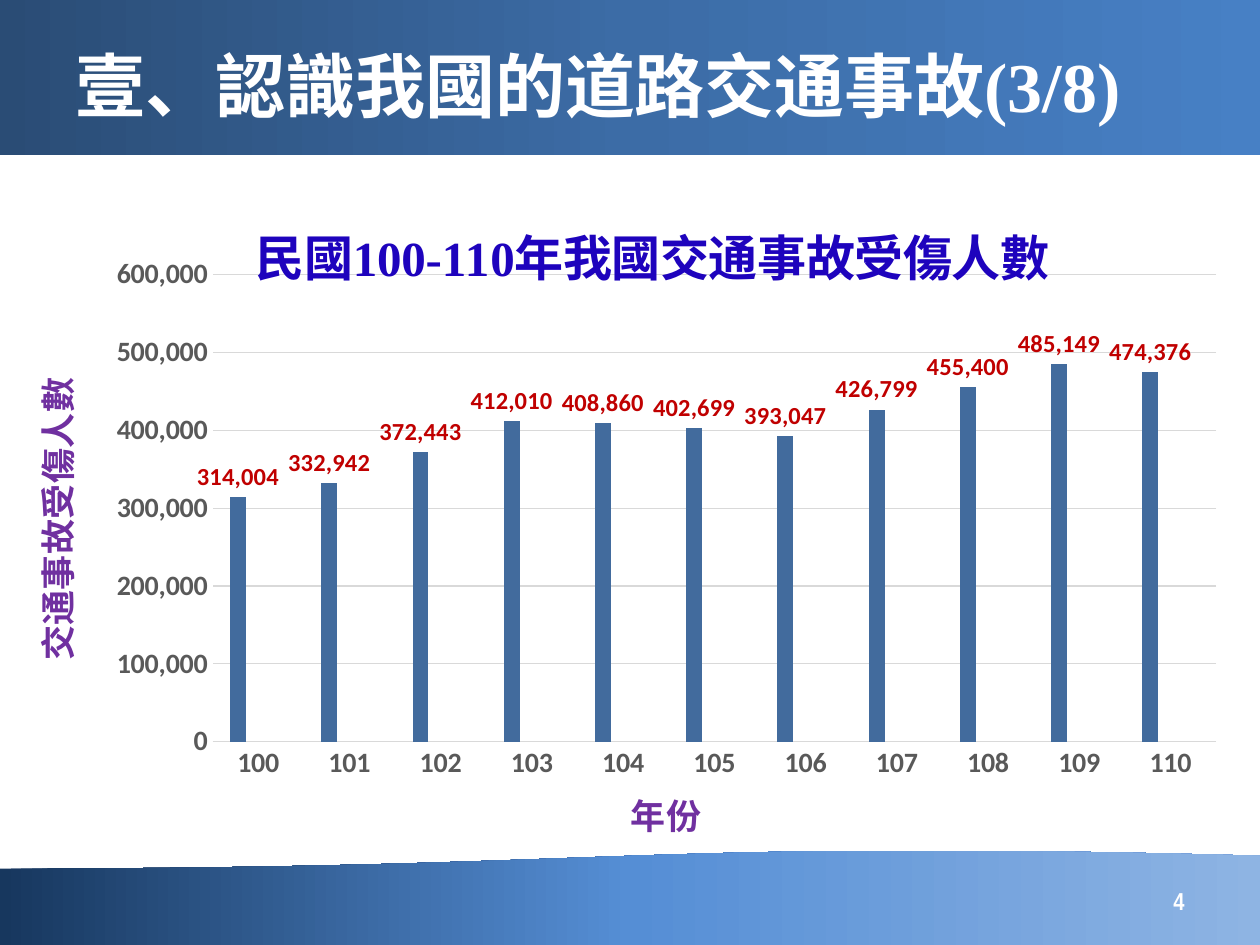
from pptx import Presentation
from pptx.chart.data import CategoryChartData
from pptx.dml.color import RGBColor
from pptx.enum.chart import XL_CHART_TYPE, XL_LABEL_POSITION, XL_TICK_MARK
from pptx.enum.shapes import MSO_SHAPE
from pptx.enum.text import MSO_ANCHOR, MSO_AUTO_SIZE, PP_ALIGN
from pptx.oxml.ns import qn
from pptx.util import Cm, Pt
from lxml import etree

COLUMN = XL_CHART_TYPE.COLUMN_CLUSTERED
OUTSIDE_END = XL_LABEL_POSITION.OUTSIDE_END
NO_TICK = XL_TICK_MARK.NONE
RECTANGLE = MSO_SHAPE.RECTANGLE
WAVE = MSO_SHAPE.FLOWCHART_DOCUMENT
MIDDLE = MSO_ANCHOR.MIDDLE
NO_AUTOFIT = MSO_AUTO_SIZE.NONE
LEFT, RIGHT = PP_ALIGN.LEFT, PP_ALIGN.RIGHT

CJK, SERIF, SANS, NARROW = "Noto Sans CJK SC", "Times New Roman", "Calibri", "Arial Narrow"
COLORS = {
    "white": "FFFFFF", "heading": "1E03BD", "axis_title": "7030A0",
    "axis_text": "595959", "grid": "D9D9D9", "label": "C00000",
    "series": ["426B9D", "4F81BD", "AABAD7"],
    "header": ["2A4C75", "3C6CA6", "4780C5"],
    "footer": ["17375E", "558ED5", "8EB4E3"],
}
YEARS = [str(year) for year in range(100, 111)]
INJURED = [314004, 332942, 372443, 412010, 408860, 402699,
           393047, 426799, 455400, 485149, 474376]


def style_font(font, size, color, name):
    """Make a font bold with the given size, colour and typeface."""
    font.size, font.bold, font.name = Pt(size), True, name
    font.color.rgb = RGBColor.from_string(color)


def style_span(span, size, color, name):
    """Format a run, with the CJK typeface for its Chinese characters."""
    style_font(span.font, size, color, name)
    east_asian = etree.SubElement(span._r.get_or_add_rPr(), qn("a:ea"))
    east_asian.set("typeface", CJK)


def set_layout(element, **values):
    """Give a chart part a manual layout."""
    layout = element.find(qn("c:layout"))
    if layout is None:
        layout = etree.Element(qn("c:layout"))
        element.insert(0, layout)
    manual = etree.SubElement(layout, qn("c:manualLayout"))
    for tag, value in values.items():
        etree.SubElement(manual, qn(f"c:{tag}")).set("val", str(value))


def add_band(page, box, preset, colors, angle=0, rotation=0):
    """Add a gradient band behind everything else on the page."""
    band = page.shapes.add_shape(preset, *map(Cm, box))
    band.shadow.inherit = False
    band.line.fill.background()
    band.rotation = rotation
    band.fill.gradient()
    band.fill.gradient_angle = angle
    stops = band._element.spPr.find(qn("a:gradFill")).find(qn("a:gsLst"))
    for stop in list(stops):
        stops.remove(stop)
    for index, color in enumerate(colors):
        stop = etree.SubElement(stops, qn("a:gs"), pos=str(index * 50000))
        etree.SubElement(stop, qn("a:srgbClr"), val=color)
    page.shapes._spTree.insert(2, band._element)


def add_header(page, box):
    """Add the top band and place the slide title on it."""
    left, top, width, height = box
    add_band(page, box, RECTANGLE, COLORS["header"])
    title = page.shapes.title
    title.left, title.top = Cm(left + 1.27), Cm(top + 0.53)
    title.width, title.height = Cm(width - 2.54), Cm(height - 0.76)
    frame = title.text_frame
    frame.vertical_anchor, frame.auto_size = MIDDLE, NO_AUTOFIT
    para = frame.paragraphs[0]
    para.alignment = LEFT
    for text, name in (("壹、認識我國的道路交通事故", CJK), ("(3/8)", SERIF)):
        span = para.add_run()
        span.text = text
        style_span(span, 40, COLORS["white"], name)


def add_footer(page, box, number):
    """Add the wavy bottom band and the page number."""
    left, top, width, height = box
    add_band(page, box, WAVE, COLORS["footer"], angle=180, rotation=180)
    number_box = page.shapes.add_textbox(
        Cm(left + width - 7.19), Cm(top + 0.53), Cm(5.92), Cm(1.02))
    frame = number_box.text_frame
    frame.word_wrap, frame.vertical_anchor = True, MIDDLE
    frame.text = number
    para = frame.paragraphs[0]
    para.alignment = RIGHT
    style_span(para.runs[0], 14, COLORS["white"], NARROW)


def set_title(owner, text, size, color, name):
    """Give a chart or an axis a formatted title."""
    frame = owner.chart_title.text_frame if hasattr(owner, "chart_title") else owner.axis_title.text_frame
    frame.text = text
    style_span(frame.paragraphs[0].runs[0], size, color, name)


def style_axis(axis, title):
    """Format the title, tick labels and tick marks of an axis."""
    set_title(axis, title, 20, COLORS["axis_title"], CJK)
    axis.major_tick_mark = axis.minor_tick_mark = NO_TICK
    style_font(axis.tick_labels.font, 16, COLORS["axis_text"], SANS)


def style_line(line):
    """Make a thin grey line."""
    line.width = Pt(0.75)
    line.color.rgb = RGBColor.from_string(COLORS["grid"])


def add_injury_chart(page, box):
    """Add the column chart of people injured in each year."""
    data = CategoryChartData(number_format="#,##0")
    data.categories = YEARS
    empty = [None] * len(YEARS)
    for index, values in enumerate((INJURED, empty, empty), 1):
        data.add_series(f"Series {index}", values)
    chart = page.shapes.add_chart(COLUMN, *map(Cm, box), data).chart
    chart.font.size, chart.font.name = Pt(10), SANS
    chart.has_legend = False
    set_title(chart, "民國100-110年我國交通事故受傷人數", 28, COLORS["heading"], SERIF)
    set_layout(chart.chart_title._element, xMode="edge", yMode="edge", x=0.19, y=0.03)
    set_layout(chart._chartSpace.chart.plotArea, layoutTarget="inner", xMode="edge",
               yMode="edge", x=0.162, y=0.135, w=0.822, h=0.702)

    style_axis(chart.category_axis, "年份")
    style_line(chart.category_axis.format.line)
    value_axis = chart.value_axis
    style_axis(value_axis, "交通事故受傷人數")
    value_axis.minimum_scale, value_axis.maximum_scale = 0, 600000
    value_axis.major_unit = 100000
    value_axis.tick_labels.number_format = "#,##0"
    value_axis.tick_labels.number_format_is_linked = False
    value_axis.format.line.fill.background()
    style_line(value_axis.major_gridlines.format.line)

    plot = chart.plots[0]
    plot.gap_width, plot.overlap, plot.vary_by_categories = 219, -27, False
    for series, color in zip(plot.series, COLORS["series"]):
        series.format.fill.solid()
        series.format.fill.fore_color.rgb = RGBColor.from_string(color)
    labels = plot.series[0].data_labels
    labels.show_value, labels.position = True, OUTSIDE_END
    style_font(labels.font, 14, COLORS["label"], SANS)


def main():
    """Build the slide and save the deck."""
    deck = Presentation()
    deck.slide_width, deck.slide_height = Cm(25.4), Cm(19.05)
    page = deck.slides.add_slide(deck.slide_layouts[5])
    add_header(page, (0, 0, 25.4, 3.12))
    add_injury_chart(page, (0.3, 3.73, 24.61, 13.41))
    add_footer(page, (0, 17.12, 25.4, 1.96), "4")
    deck.save("out.pptx")


if __name__ == "__main__":
    main()
